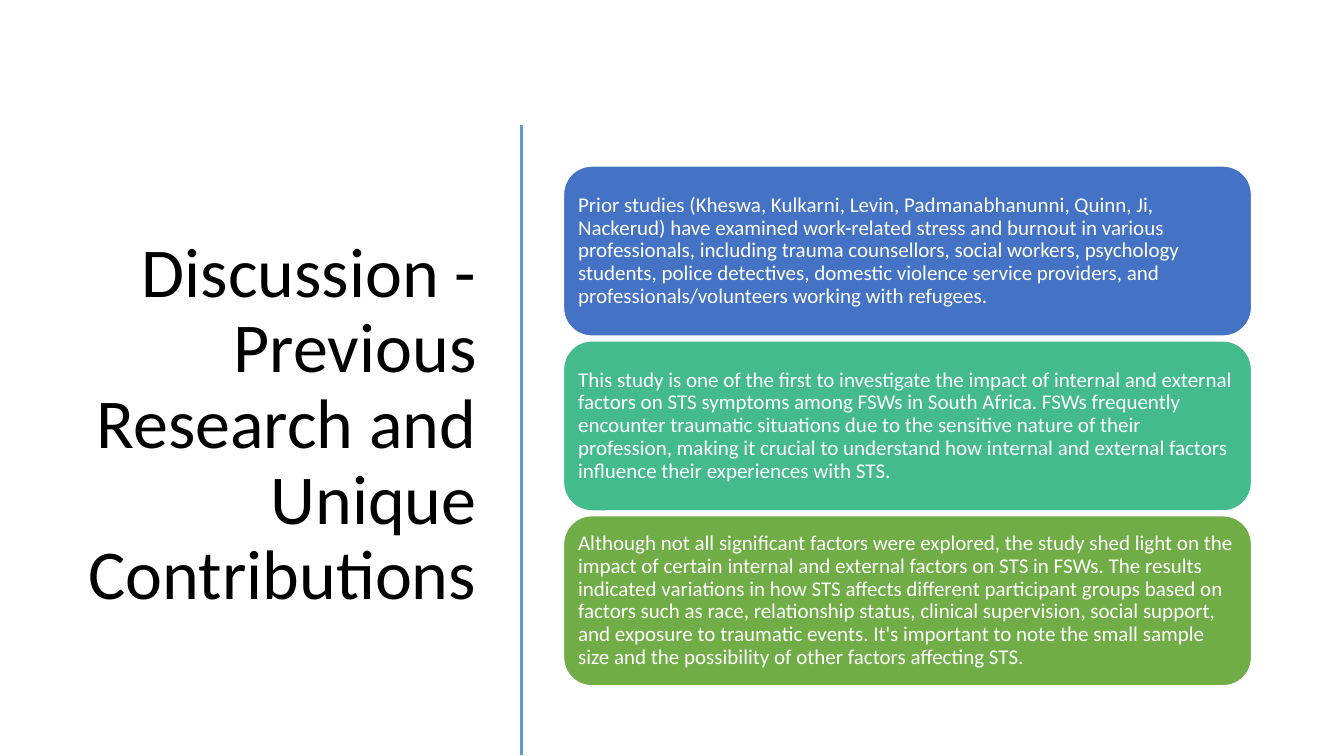
import pptx
import pptx.util
import pptx.dml.color
import pptx.enum.shapes
import pptx.enum.text
import lxml.etree

Pt = pptx.util.Pt
RGBColor = pptx.dml.color.RGBColor
PP_ALIGN = pptx.enum.text.PP_ALIGN
MIDDLE = pptx.enum.text.MSO_ANCHOR.MIDDLE

BLACK = RGBColor(0x00, 0x00, 0x00)
WHITE = RGBColor(0xFF, 0xFF, 0xFF)
DIVIDER_BLUE = RGBColor(0x5B, 0x9B, 0xD5)
BLUE = RGBColor(0x44, 0x72, 0xC4)
TEAL = RGBColor(0x43, 0xBB, 0x8D)
GREEN = RGBColor(0x70, 0xAD, 0x47)

FINDINGS = [
    (BLUE, "Prior studies (Kheswa, Kulkarni, Levin, Padmanabhanunni, Quinn, Ji, Nackerud) "
           "have examined work-related stress and burnout in various professionals, including "
           "trauma counsellors, social workers, psychology students, police detectives, domestic "
           "violence service providers, and professionals/volunteers working with refugees."),
    (TEAL, "This study is one of the first to investigate the impact of internal and external "
           "factors on STS symptoms among FSWs in South Africa. FSWs frequently encounter "
           "traumatic situations due to the sensitive nature of their profession, making it "
           "crucial to understand how internal and external factors influence their experiences "
           "with STS."),
    (GREEN, "Although not all significant factors were explored, the study shed light on the "
            "impact of certain internal and external factors on STS in FSWs. The results "
            "indicated variations in how STS affects different participant groups based on "
            "factors such as race, relationship status, clinical supervision, social support, "
            "and exposure to traumatic events. It's important to note the small sample size and "
            "the possibility of other factors affecting STS."),
]
FIRST_TOP = 118.6
PITCH = 124.9


def format_text(frame, text, size, color, align):
    frame.text = text
    frame.word_wrap = True
    frame.auto_size = pptx.enum.text.MSO_AUTO_SIZE.NONE
    frame.vertical_anchor = MIDDLE
    paragraph = frame.paragraphs[0]
    paragraph.alignment = align
    paragraph.line_spacing = 0.9
    font = paragraph.runs[0].font
    font.name = "Calibri"
    font.size = Pt(size)
    font.color.rgb = color


presentation = pptx.Presentation()
presentation.slide_width = Pt(960)
presentation.slide_height = Pt(540)
slide = presentation.slides.add_slide(presentation.slide_layouts[5])

heading = slide.shapes.title
heading.left, heading.top, heading.width, heading.height = Pt(37.4), Pt(84.2), Pt(310.3), Pt(440)
format_text(heading.text_frame, "Discussion - Previous Research and Unique Contributions",
            50, BLACK, PP_ALIGN.RIGHT)

divider = slide.shapes.add_connector(
    pptx.enum.shapes.MSO_CONNECTOR.STRAIGHT, Pt(372.4), Pt(89), Pt(372.4), Pt(539.5))
divider.line.color.rgb = DIVIDER_BLUE
divider.line.width = Pt(2)
lxml.etree.SubElement(divider._element.spPr, pptx.oxml.ns.qn("a:effectLst"))

for row, (fill_color, finding) in enumerate(FINDINGS):
    card = slide.shapes.add_shape(
        pptx.enum.shapes.MSO_SHAPE.ROUNDED_RECTANGLE,
        Pt(402.5), Pt(FIRST_TOP + row * PITCH), Pt(491.5), Pt(121.5))
    card.shadow.inherit = False
    card.fill.solid()
    card.fill.fore_color.rgb = fill_color
    card.line.color.rgb = WHITE
    card.line.width = Pt(1)
    frame = card.text_frame
    frame.margin_left = frame.margin_right = frame.margin_top = frame.margin_bottom = Pt(4.5)
    format_text(frame, finding, 15, WHITE, PP_ALIGN.LEFT)

presentation.save("out.pptx")
